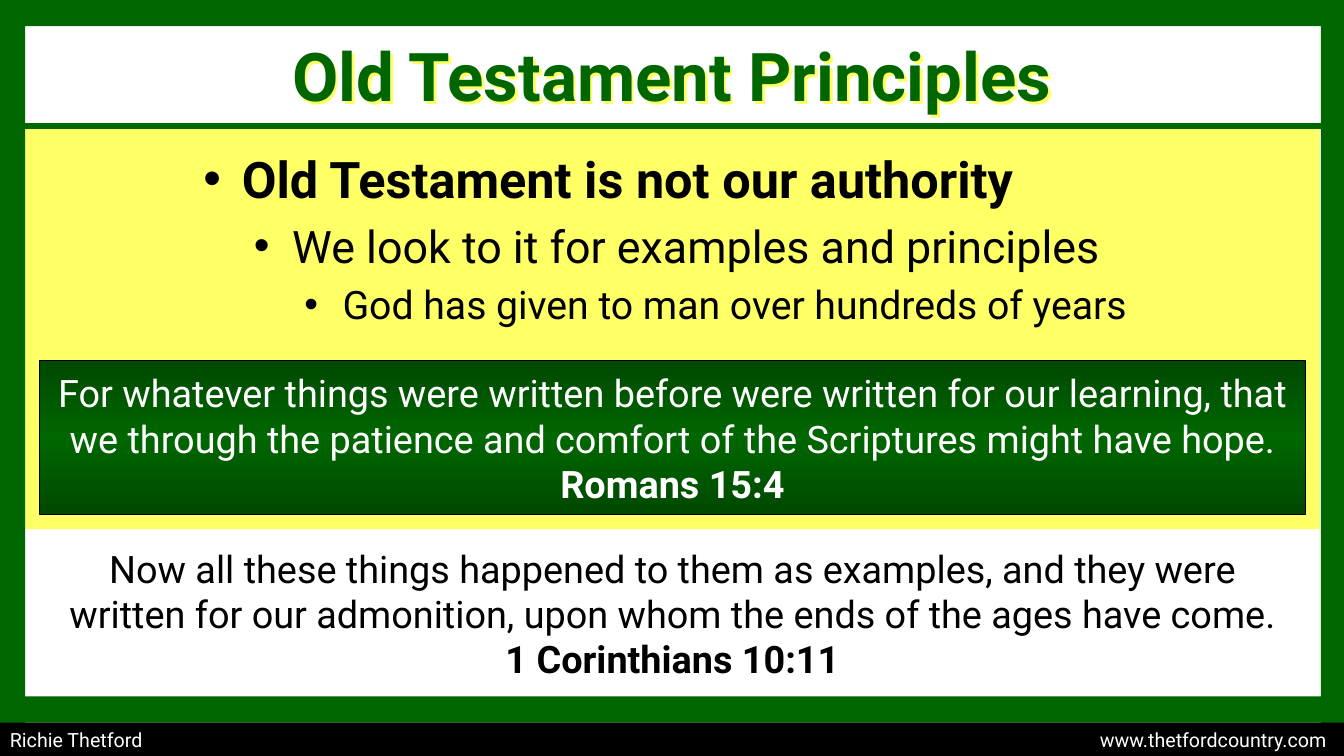
import copy
from dataclasses import dataclass

import pptx
import pptx.util
import pptx.dml.color
import pptx.enum.shapes
import pptx.enum.text
import pptx.oxml
import pptx.oxml.ns
from lxml import etree
from pptx.util import Inches, Pt

ALIGN = pptx.enum.text.PP_ALIGN


@dataclass(frozen=True)
class Theme:
    font: str = "Roboto"
    green: str = "006600"
    dark_green: str = "004900"
    yellow: str = "FFFF66"
    black: str = "000000"
    white: str = "FFFFFF"
    title: int = 48
    levels: tuple = (36, 32, 28)
    verse: int = 27
    footer: int = 14


T = Theme()


def rgb(color):
    return pptx.dml.color.RGBColor.from_string(color)


def sub(parent, tag, **attrs):
    el = etree.SubElement(parent, pptx.oxml.ns.qn(tag))
    for name, value in attrs.items():
        el.set(name, str(value))
    return el


def add_rect(s, box, fill):
    sp = s.shapes.add_shape(pptx.enum.shapes.MSO_SHAPE.RECTANGLE,
                            *[Inches(v) for v in box])
    sp.shadow.inherit = False
    sp.fill.solid()
    sp.fill.fore_color.rgb = rgb(fill)
    sp.line.fill.background()
    return sp


def add_box(s, box):
    sp = s.shapes.add_textbox(*[Inches(v) for v in box])
    sp.text_frame.word_wrap = True
    return sp


def add_run(p, text, size, color, bold=False):
    r = p.add_run()
    r.text = text
    r.font.name = T.font
    r.font.size = Pt(size)
    r.font.bold = bold
    r.font.color.rgb = rgb(color)


def add_title(s, text):
    sp = add_box(s, (2.08, 0.29, 9.17, 0.9))
    p = sp.text_frame.paragraphs[0]
    p.alignment = ALIGN.CENTER
    add_run(p, text, T.title, T.green, bold=True)
    effects = sub(sp._element.spPr, "a:effectLst")
    shadow = sub(effects, "a:outerShdw", dist=Inches(0.04), dir=2700000,
                 algn="ctr", rotWithShape=0)
    sub(shadow, "a:srgbClr", val=T.yellow)


def add_bullets(s, lines):
    """Write one line per outline level, each indented half an inch more."""
    tf = add_box(s, (1.92, 1.42, 9.5, 2.1)).text_frame
    for level, (text, size) in enumerate(zip(lines, T.levels)):
        p = tf.add_paragraph() if level else tf.paragraphs[0]
        p.level = level
        if level:
            p.space_before = Pt(round(0.22 * size))
        pPr = p._p.get_or_add_pPr()
        pPr.set("marL", str(Inches(0.38 + 0.5 * level)))
        pPr.set("indent", str(-Inches(0.38)))
        sub(pPr, "a:buFont", typeface="Arial")
        sub(pPr, "a:buChar", char="•")
        add_run(p, text, size, T.black, bold=level == 0)


def add_verse(s, top, text, reference, color):
    tf = add_box(s, (0.39, top, 12.56, 1.46)).text_frame
    for p, words, bold in ((tf.paragraphs[0], text, False),
                           (tf.add_paragraph(), reference, True)):
        p.alignment = ALIGN.CENTER
        add_run(p, words, T.verse, color, bold)


def add_gradient_panel(s, box):
    """Draw an outlined panel that is lightest along its middle."""
    sp = add_rect(s, box, T.green)
    sp.line.color.rgb = rgb(T.black)
    sp.line.width = Pt(0.75)
    sp.fill.gradient()
    sp.fill.gradient_angle = 90
    first = sp._element.spPr.find(".//" + pptx.oxml.ns.qn("a:gs"))
    first.addnext(copy.deepcopy(first))
    stops = zip(sp.fill.gradient_stops, (0, 0.5, 1),
                (T.dark_green, T.green, T.dark_green))
    for stop, position, color in stops:
        stop.position = position
        stop.color.rgb = rgb(color)


def add_footer(s, author, site):
    tf = add_rect(s, (0, 7.17, 13.33, 0.34), T.black).text_frame
    p = tf.paragraphs[0]
    p.alignment = ALIGN.LEFT
    tabs = sub(p._p.get_or_add_pPr(), "a:tabLst")
    sub(tabs, "a:tab", pos=Inches(13.06), algn="r")
    add_run(p, author + "\t" + site, T.footer, T.white)


def add_rule(s, x1, x2, y):
    line = s.shapes.add_connector(pptx.enum.shapes.MSO_CONNECTOR.STRAIGHT,
                                  Inches(x1), Inches(y), Inches(x2), Inches(y))
    line.line.color.rgb = rgb(T.green)
    line.line.width = Pt(4.5)
    sub(line._element.spPr, "a:effectLst")


def main():
    prs = pptx.Presentation()
    prs.slide_width, prs.slide_height = Inches(13.33), Inches(7.5)
    s = prs.slides.add_slide(prs.slide_layouts[6])

    add_rect(s, (0.25, 1.25, 12.84, 4), T.yellow)
    add_title(s, "Old Testament Principles")
    add_gradient_panel(s, (0.39, 3.58, 12.56, 1.52))
    add_bullets(s, ("Old Testament is not our authority",
                    "We look to it for examples and principles",
                    "God has given to man over hundreds of years"))
    add_verse(s, 3.62,
              "For whatever things were written before were written for our "
              "learning, that we through the patience and comfort of the "
              "Scriptures might have hope.", "Romans 15:4", T.white)
    add_verse(s, 5.36,
              "Now all these things happened to them as examples, and they "
              "were written for our admonition, upon whom the ends of the "
              "ages have come.", "1 Corinthians 10:11", T.black)

    frame = ((0, 0, 0.25, 7.5), (13.1, 0, 0.23, 7.5),
             (0.25, 0, 12.94, 0.26), (0.12, 6.91, 13.07, 0.26))
    for bar in frame:
        add_rect(s, bar, T.green)
    add_footer(s, "Richie Thetford", "www.thetfordcountry.com")
    add_rule(s, 0.18, 13.1, 1.25)
    prs.save("out.pptx")


if __name__ == "__main__":
    main()
